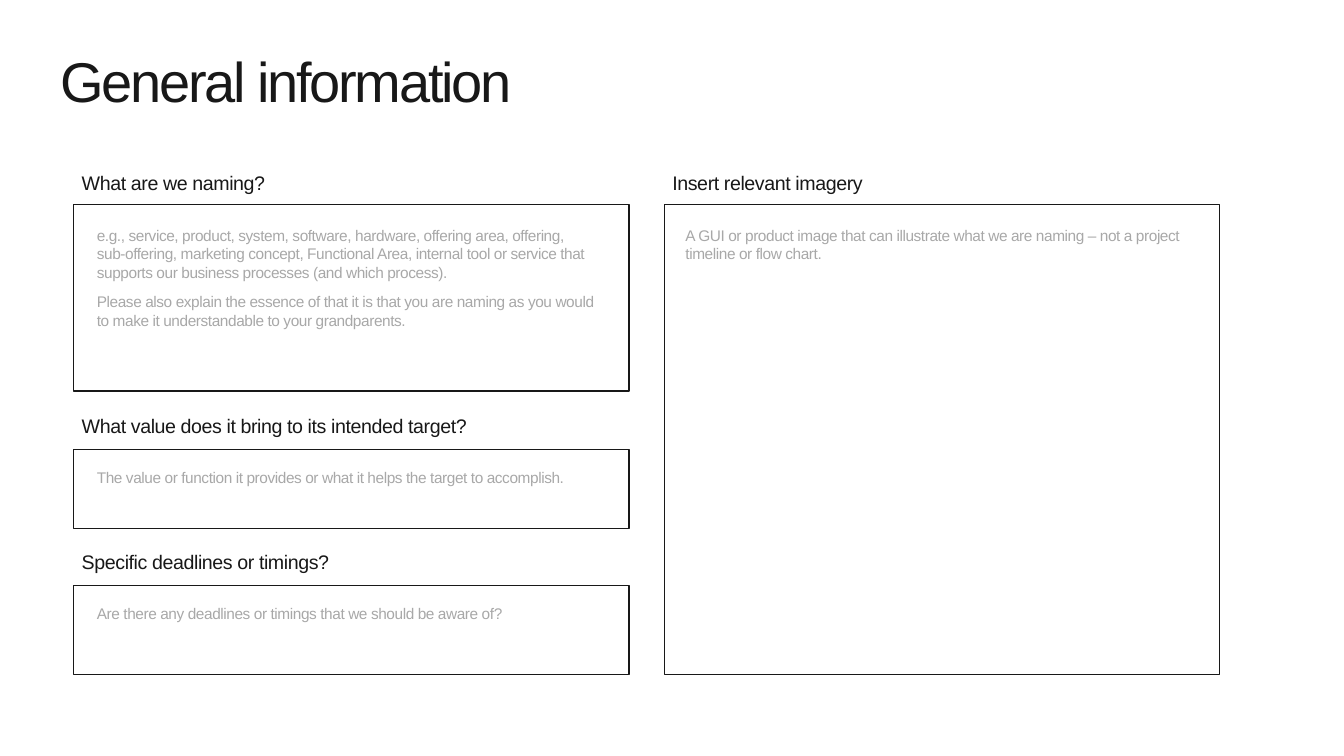
"""Build the General information slide of a naming brief."""
import pptx
import pptx.util
import pptx.dml.color
import pptx.enum.shapes
import pptx.enum.text

Pt = pptx.util.Pt
INK = pptx.dml.color.RGBColor(0x18, 0x18, 0x18)
HINT_GREY = pptx.dml.color.RGBColor(0xA8, 0xA8, 0xA8)
TOP = pptx.enum.text.MSO_ANCHOR.TOP
BOTTOM = pptx.enum.text.MSO_ANCHOR.BOTTOM

PANEL_WIDTH = 396.7
LEFT_COLUMN = 52.6
RIGHT_COLUMN = 474.5
HEADING_HEIGHT = 25.2

deck = pptx.Presentation()
deck.slide_width = Pt(960)
deck.slide_height = Pt(540)
slide = deck.slides.add_slide(deck.slide_layouts[6])


def add_text(paragraphs, left, top, width, height, size, color,
             tracking=-0.3, anchor=TOP, line_spacing=1.0):
    frame = slide.shapes.add_textbox(Pt(left), Pt(top), Pt(width), Pt(height)).text_frame
    frame.word_wrap = True
    frame.vertical_anchor = anchor
    frame.margin_left = frame.margin_right = Pt(5.76)
    frame.margin_top = frame.margin_bottom = Pt(2.88)
    for index, text in enumerate(paragraphs):
        paragraph = frame.add_paragraph() if index else frame.paragraphs[0]
        paragraph.text = text
        paragraph.line_spacing = line_spacing
        if index:
            paragraph.space_before = Pt(8)
        for run in paragraph.runs:
            run.font.name = "Arial"
            run.font.size = Pt(size)
            run.font.color.rgb = color
            run.font._element.set("spc", str(round(tracking * 100)))


add_text(["General information"], 37.4, 37.4, 658, 85, size=40, color=INK,
         tracking=-1.6, line_spacing=0.85)

sections = [
    ("What are we naming?", LEFT_COLUMN, 146.2, 133.2, 116.6, 10.8, 12.2, 373.7, [
        "e.g., service, product, system, software, hardware, offering area, offering,\n"
        "sub-offering, marketing concept, Functional Area, internal tool or service that "
        "supports our business processes (and which process).",
        "Please also explain the essence of that it is that you are naming as you would "
        "to make it understandable to your grandparents."]),
    ("What value does it bring to its intended target?", LEFT_COLUMN, 321.1, 56.2, 290.2, 10.8, 10.1, 373.7, [
        "The value or function it provides or what it helps the target to accomplish."]),
    ("Insert relevant imagery", RIGHT_COLUMN, 146.2, 335.5, 116.6, 9.4, 12.2, 369.4, [
        "A GUI or product image that can illustrate what we are naming – not a project "
        "timeline or flow chart."]),
    ("Specific deadlines or timings?", LEFT_COLUMN, 418.3, 63.4, 387.4, 10.8, 10.1, 373.7, [
        "Are there any deadlines or timings that we should be aware of?"]),
]

for heading, left, top, height, heading_top, indent, drop, hint_width, hints in sections:
    panel = slide.shapes.add_shape(pptx.enum.shapes.MSO_SHAPE.RECTANGLE,
                                   Pt(left), Pt(top), Pt(PANEL_WIDTH), Pt(height))
    panel.shadow.inherit = False
    panel.fill.background()
    panel.line.color.rgb = INK
    panel.line.width = Pt(1)
    add_text([heading], left, heading_top, PANEL_WIDTH, HEADING_HEIGHT,
             size=14, color=INK, anchor=BOTTOM)
    add_text(hints, left + indent, top + drop, hint_width, height - 2 * drop,
             size=11, color=HINT_GREY)

deck.save("out.pptx")
